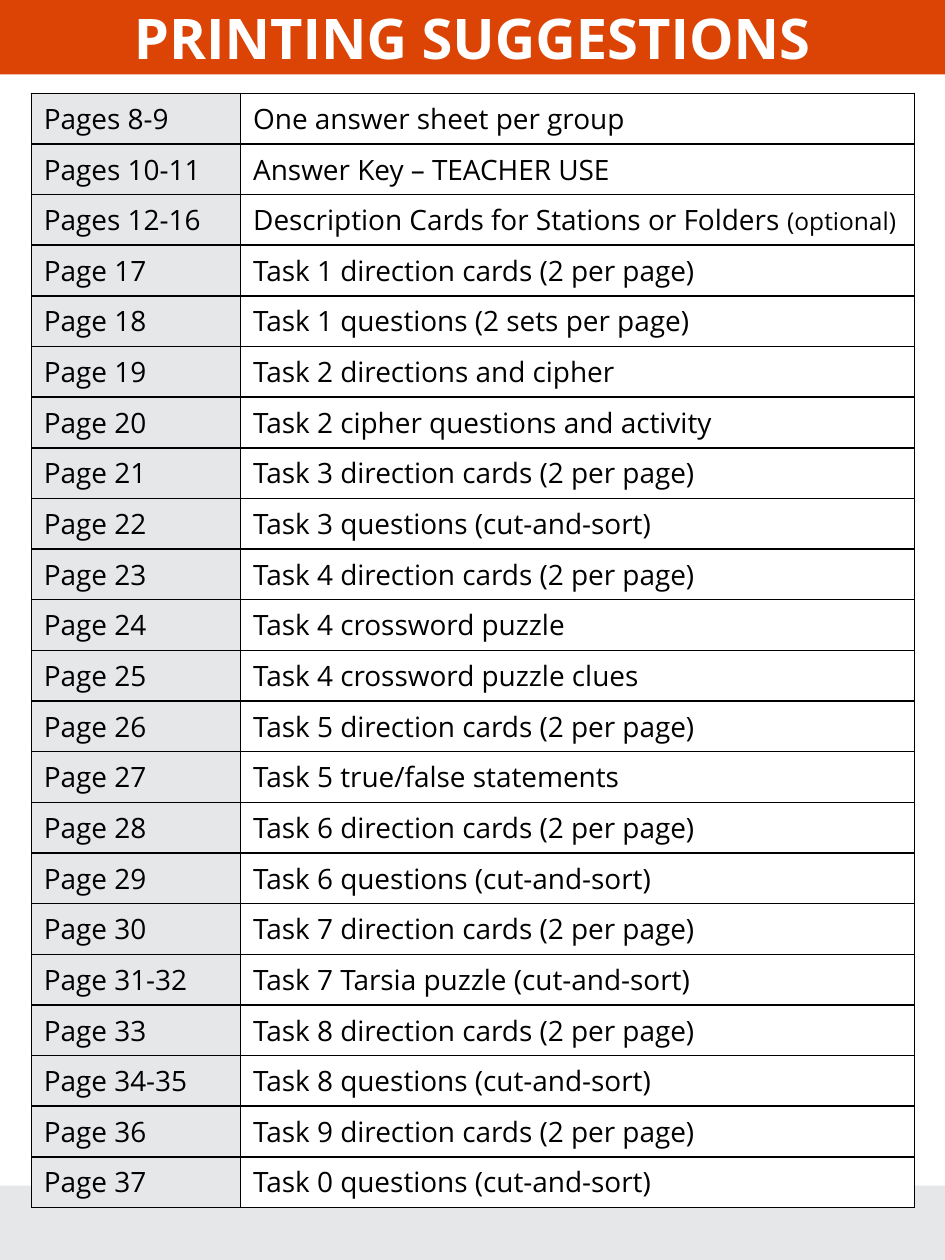
from typing import NamedTuple

from lxml.etree import SubElement
from pptx import Presentation
from pptx.dml.color import RGBColor
from pptx.enum.shapes import MSO_SHAPE
from pptx.enum.text import MSO_ANCHOR, PP_ALIGN
from pptx.oxml.ns import qn
from pptx.util import Cm, Pt

COLORS = {"orange": "DC4405", "gray": "E6E7E8", "white": "FFFFFF", "black": "000000"}
FONT = "Open Sans"
SLIDE_WIDTH, SLIDE_HEIGHT = Cm(19.05), Cm(25.4)
BAND_HEIGHT = Cm(1.5)
COLUMN_WIDTHS = (Cm(4.22), Cm(13.59))


class Printout(NamedTuple):
    pages: str
    content: str
    remark: str = ""


PRINTOUTS = [
    Printout("Pages 8-9", "One answer sheet per group"),
    Printout("Pages 10-11", "Answer Key – TEACHER USE"),
    Printout("Pages 12-16", "Description Cards for Stations or Folders ", "(optional)"),
    Printout("Page 17", "Task 1 direction cards (2 per page)"),
    Printout("Page 18", "Task 1 questions (2 sets per page)"),
    Printout("Page 19", "Task 2 directions and cipher"),
    Printout("Page 20", "Task 2 cipher questions and activity"),
    Printout("Page 21", "Task 3 direction cards (2 per page)"),
    Printout("Page 22", "Task 3 questions (cut-and-sort)"),
    Printout("Page 23", "Task 4 direction cards (2 per page)"),
    Printout("Page 24", "Task 4 crossword puzzle"),
    Printout("Page 25", "Task 4 crossword puzzle clues"),
    Printout("Page 26", "Task 5 direction cards (2 per page)"),
    Printout("Page 27", "Task 5 true/false statements"),
    Printout("Page 28", "Task 6 direction cards (2 per page)"),
    Printout("Page 29", "Task 6 questions (cut-and-sort)"),
    Printout("Page 30", "Task 7 direction cards (2 per page)"),
    Printout("Page 31-32", "Task 7 Tarsia puzzle (cut-and-sort)"),
    Printout("Page 33", "Task 8 direction cards (2 per page)"),
    Printout("Page 34-35", "Task 8 questions (cut-and-sort)"),
    Printout("Page 36", "Task 9 direction cards (2 per page)"),
    Printout("Page 37", "Task 0 questions (cut-and-sort)"),
]


def rgb(name: str) -> RGBColor:
    return RGBColor.from_string(COLORS[name])


def format_run(run, size: int, color: str, bold: bool = False) -> None:
    run.font.name = FONT
    run.font.size = Pt(size)
    run.font.bold = bold
    run.font.color.rgb = rgb(color)


def add_band(slide, top: int, color: str):
    """Add a full-width bar without outline."""
    shape = slide.shapes.add_shape(MSO_SHAPE.RECTANGLE, 0, top, SLIDE_WIDTH, BAND_HEIGHT)
    shape.shadow.inherit = False
    shape.fill.solid()
    shape.fill.fore_color.rgb = rgb(color)
    shape.line.fill.background()
    return shape


def add_title(slide, text: str) -> None:
    text_frame = add_band(slide, 0, "orange").text_frame
    text_frame.text = text
    text_frame.word_wrap = True
    text_frame.vertical_anchor = MSO_ANCHOR.MIDDLE
    paragraph = text_frame.paragraphs[0]
    paragraph.alignment = PP_ALIGN.CENTER
    format_run(paragraph.runs[0], 32, "white", bold=True)


def add_borders(cell) -> None:
    properties = cell._tc.get_or_add_tcPr()
    for position, side in enumerate(("a:lnL", "a:lnR", "a:lnT", "a:lnB")):
        line = SubElement(properties, qn(side), w=str(Pt(1)))
        fill = SubElement(line, qn("a:solidFill"))
        SubElement(fill, qn("a:srgbClr"), val=COLORS["black"])
        properties.insert(position, line)


def fill_cell(cell, text: str, color: str, remark: str = "") -> None:
    cell.fill.solid()
    cell.fill.fore_color.rgb = rgb(color)
    add_borders(cell)
    cell.text_frame.text = text
    paragraph = cell.text_frame.paragraphs[0]
    format_run(paragraph.runs[0], 16, "black")
    if remark:
        run = paragraph.add_run()
        run.text = remark
        format_run(run, 14, "black")


def add_printout_table(slide, printouts: list[Printout]) -> None:
    frame = slide.shapes.add_table(
        len(printouts), len(COLUMN_WIDTHS), Cm(0.63), Cm(1.88), sum(COLUMN_WIDTHS), Cm(20.5)
    )
    table = frame.table
    table.first_row = False
    table.horz_banding = False
    for column, width in zip(table.columns, COLUMN_WIDTHS):
        column.width = width
    for row, printout in enumerate(printouts):
        fill_cell(table.cell(row, 0), printout.pages, "gray")
        fill_cell(table.cell(row, 1), printout.content, "white", printout.remark)


def main() -> None:
    presentation = Presentation()
    presentation.slide_width = SLIDE_WIDTH
    presentation.slide_height = SLIDE_HEIGHT
    slide = presentation.slides.add_slide(presentation.slide_layouts[6])
    add_band(slide, SLIDE_HEIGHT - BAND_HEIGHT, "gray")
    add_title(slide, "PRINTING SUGGESTIONS")
    add_printout_table(slide, PRINTOUTS)
    presentation.save("out.pptx")


if __name__ == "__main__":
    main()
